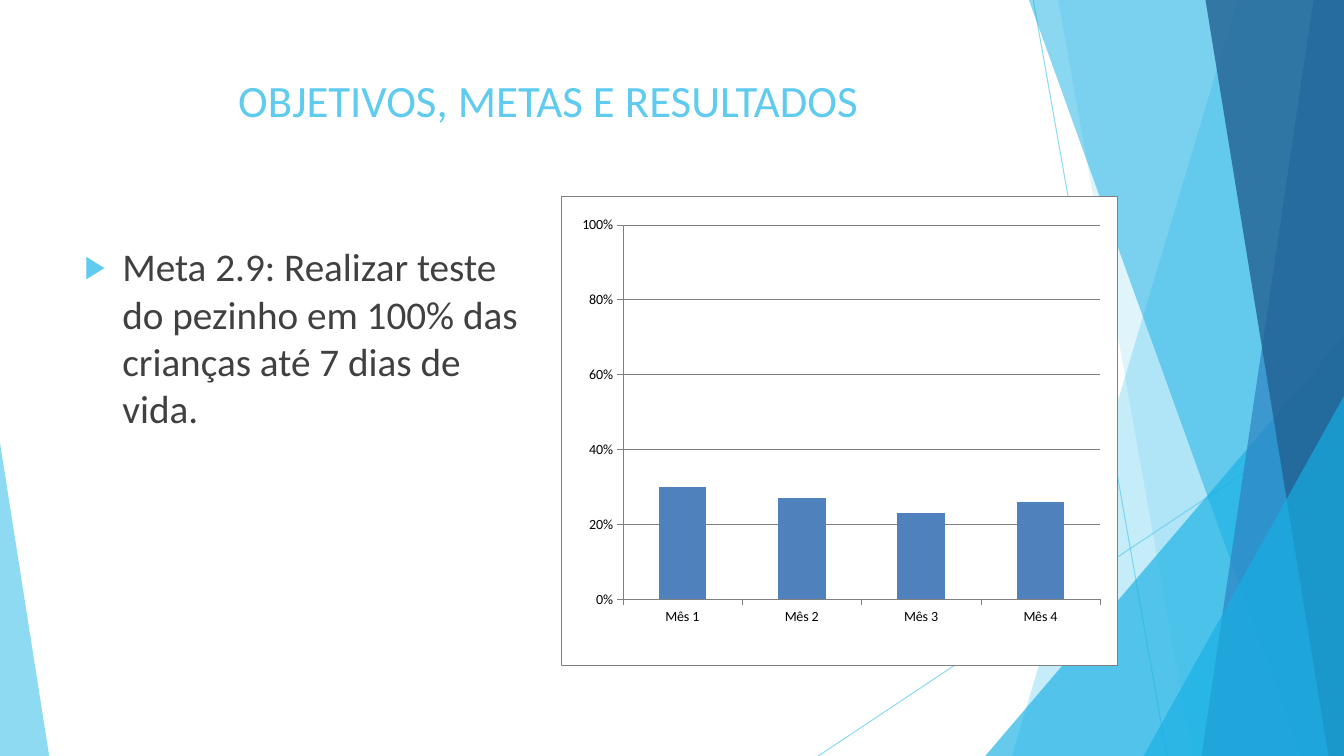
from dataclasses import dataclass

from lxml import etree
from pptx import Presentation
from pptx.chart.data import CategoryChartData
from pptx.dml.color import RGBColor
from pptx.enum.chart import XL_CHART_TYPE, XL_TICK_MARK
from pptx.enum.shapes import MSO_CONNECTOR, MSO_SHAPE
from pptx.enum.text import MSO_ANCHOR, MSO_AUTO_SIZE, PP_ALIGN
from pptx.oxml import parse_xml
from pptx.oxml.ns import nsdecls, qn
from pptx.util import Cm, Pt

COLUMN = XL_CHART_TYPE.COLUMN_CLUSTERED
OUT, NONE = XL_TICK_MARK.OUTSIDE, XL_TICK_MARK.NONE
LINE, WEDGE = MSO_CONNECTOR.STRAIGHT, MSO_SHAPE.ISOSCELES_TRIANGLE
TOP, FIXED = MSO_ANCHOR.TOP, MSO_AUTO_SIZE.NONE
LEFT, CENTER = PP_ALIGN.LEFT, PP_ALIGN.CENTER
WIDE, HIGH = 33.87, 19.05


@dataclass(frozen=True)
class Theme:
    font: str = "Calibri"
    sky: str = "5FCBEF"
    cyan: str = "17B0E4"
    blue: str = "2E83C3"
    navy: str = "226292"
    text: str = "404040"
    black: str = "000000"
    white: str = "FFFFFF"
    gray: str = "808080"
    bar: str = "4F81BD"
    title: int = 32
    body: int = 28
    label: int = 10
    hair: float = 0.25
    thin: float = 0.75


def apply(target, **values):
    for name, value in values.items():
        setattr(target, name, value)


def fade(shape, percent):
    for color in shape._element.spPr.iter(qn("a:srgbClr")):
        etree.SubElement(color, qn("a:alpha"), val=str(percent * 1000))


class Painter:
    def __init__(self, slide, theme):
        self.slide, self.theme = slide, theme
        self.shapes = slide.shapes

    def ink(self, font, size, color):
        apply(font, name=self.theme.font, size=Pt(size), bold=False)
        font.color.rgb = RGBColor.from_string(color)

    def paint(self, shape, color, alpha):
        shape.shadow.inherit = False
        shape.fill.solid()
        shape.fill.fore_color.rgb = RGBColor.from_string(color)
        shape.line.fill.background()
        fade(shape, alpha)

    def stroke(self, line, color, width):
        line.color.rgb = RGBColor.from_string(color)
        line.width = Pt(width)

    def ray(self, x1, y1, x2, y2):
        line = self.shapes.add_connector(LINE, Cm(x1), Cm(y1), Cm(x2), Cm(y2))
        self.stroke(line.line, self.theme.sky, self.theme.thin)
        fade(line, 70)
        etree.SubElement(line._element.spPr, qn("a:effectLst"))

    def band(self, top, base, color, alpha):
        form = self.shapes.build_freeform(Cm(top), Cm(0))
        corners = [(WIDE, 0), (WIDE, HIGH), (base, HIGH)]
        form.add_line_segments([(Cm(x), Cm(y)) for x, y in corners], close=True)
        self.paint(form.convert_to_shape(), color, alpha)

    def wedge(self, width, height, peak, color, alpha):
        left = (WIDE - width) * peak
        shape = self.shapes.add_shape(
            WEDGE, Cm(left), Cm(HIGH - height), Cm(width), Cm(height))
        shape.adjustments[0] = peak
        self.paint(shape, color, alpha)

    def place(self, holder, box, text, size, color, align):
        for name, value in zip(("left", "top", "width", "height"), box):
            setattr(holder, name, Cm(value))
        frame = holder.text_frame
        apply(frame, text=text, word_wrap=True, auto_size=FIXED,
              vertical_anchor=TOP)
        para = frame.paragraphs[0]
        para.alignment = align
        self.ink(para.runs[0].font, size, color)
        return para

    def title(self, box, text):
        theme = self.theme
        self.place(self.shapes.title, box, text, theme.title, theme.sky, CENTER)

    def bullet(self, box, text):
        theme = self.theme
        para = self.place(self.slide.placeholders[1], box, text,
                          theme.body, theme.text, LEFT)
        para.space_before = Pt(10)
        props = para._p.get_or_add_pPr()
        props.set("marL", str(Cm(0.95)))
        props.set("indent", str(-Cm(0.95)))
        tint = etree.SubElement(props, qn("a:buClr"))
        etree.SubElement(tint, qn("a:srgbClr"), val=theme.sky)
        etree.SubElement(props, qn("a:buSzPct"), val="80000")
        etree.SubElement(props, qn("a:buChar"), char="▶")

    def panel(self, border=""):
        return parse_xml(
            f'<c:spPr {nsdecls("c", "a")}><a:solidFill><a:srgbClr '
            f'val="{self.theme.white}"/></a:solidFill>{border}</c:spPr>')

    def chart(self, box, names, values):
        theme = self.theme
        data = CategoryChartData(number_format="0%")
        data.categories = names
        data.add_series("Series 1", values)
        chart = self.shapes.add_chart(COLUMN, *map(Cm, box), data).chart
        apply(chart, has_title=False, has_legend=False)
        self.ink(chart.font, theme.label, theme.black)

        # Bars
        plot = chart.plots[0]
        apply(plot, gap_width=150, vary_by_categories=False)
        fill = plot.series[0].format.fill
        fill.solid()
        fill.fore_color.rgb = RGBColor.from_string(theme.bar)

        # Axes
        scale = chart.value_axis
        for axis in (chart.category_axis, scale):
            apply(axis, major_tick_mark=OUT, minor_tick_mark=NONE)
            self.ink(axis.tick_labels.font, theme.label, theme.black)
            self.stroke(axis.format.line, theme.gray, theme.hair)
        apply(scale, minimum_scale=0, maximum_scale=1, major_unit=0.2,
              has_major_gridlines=True)
        self.stroke(scale.major_gridlines.format.line, theme.gray, theme.hair)
        apply(scale.tick_labels, number_format="0%",
              number_format_is_linked=False)

        # Plot place and backgrounds
        root = chart._chartSpace.find(qn("c:chart"))
        area = root.find(qn("c:plotArea"))
        for old in area.findall(qn("c:layout")):
            area.remove(old)
        spot = {"layoutTarget": "inner", "xMode": "edge", "yMode": "edge",
                "x": 0.11, "y": 0.06, "w": 0.86, "h": 0.8}
        layout = etree.Element(qn("c:layout"))
        manual = etree.SubElement(layout, qn("c:manualLayout"))
        for name, value in spot.items():
            etree.SubElement(manual, qn(f"c:{name}"), val=str(value))
        area.insert(0, layout)
        area.append(self.panel())
        root.addnext(self.panel(
            f'<a:ln w="{Pt(theme.hair)}"><a:solidFill><a:srgbClr '
            f'val="{theme.gray}"/></a:solidFill></a:ln>'))


def main():
    deck = Presentation()
    apply(deck, slide_width=Cm(WIDE), slide_height=Cm(HIGH))
    theme = Theme()
    page = Painter(deck.slides.add_slide(deck.slide_layouts[1]), theme)

    # Backdrop, from back to front
    page.ray(26.04, 0, 29.41, HIGH)
    page.ray(WIDE, 10.24, 20.62, HIGH)
    page.band(31.19, 25.5, theme.sky, 36)
    page.band(26.67, 30.05, theme.sky, 20)
    page.wedge(9.04, 10.59, 1, theme.cyan, 66)
    page.band(25.93, 32.79, theme.cyan, 50)
    page.band(33.1, 30.28, theme.blue, 70)
    page.band(30.38, 33.48, theme.navy, 80)
    page.wedge(5.05, 9.07, 1, theme.cyan, 66)
    page.wedge(1.24, 7.9, 0, theme.sky, 70)

    # Goal and its results
    page.title((1.88, 1.7, 23.88, 3.66), "OBJETIVOS, METAS E RESULTADOS")
    page.bullet((1.88, 5.99, 11.63, 10.77),
                "Meta 2.9: Realizar teste do pezinho em 100% das crianças "
                "até 7 dias de vida.")
    page.chart((14.15, 4.95, 14, 11.81),
               [f"Mês {month}" for month in range(1, 5)],
               (0.3, 0.27, 0.23, 0.26))

    deck.save("out.pptx")


if __name__ == "__main__":
    main()
